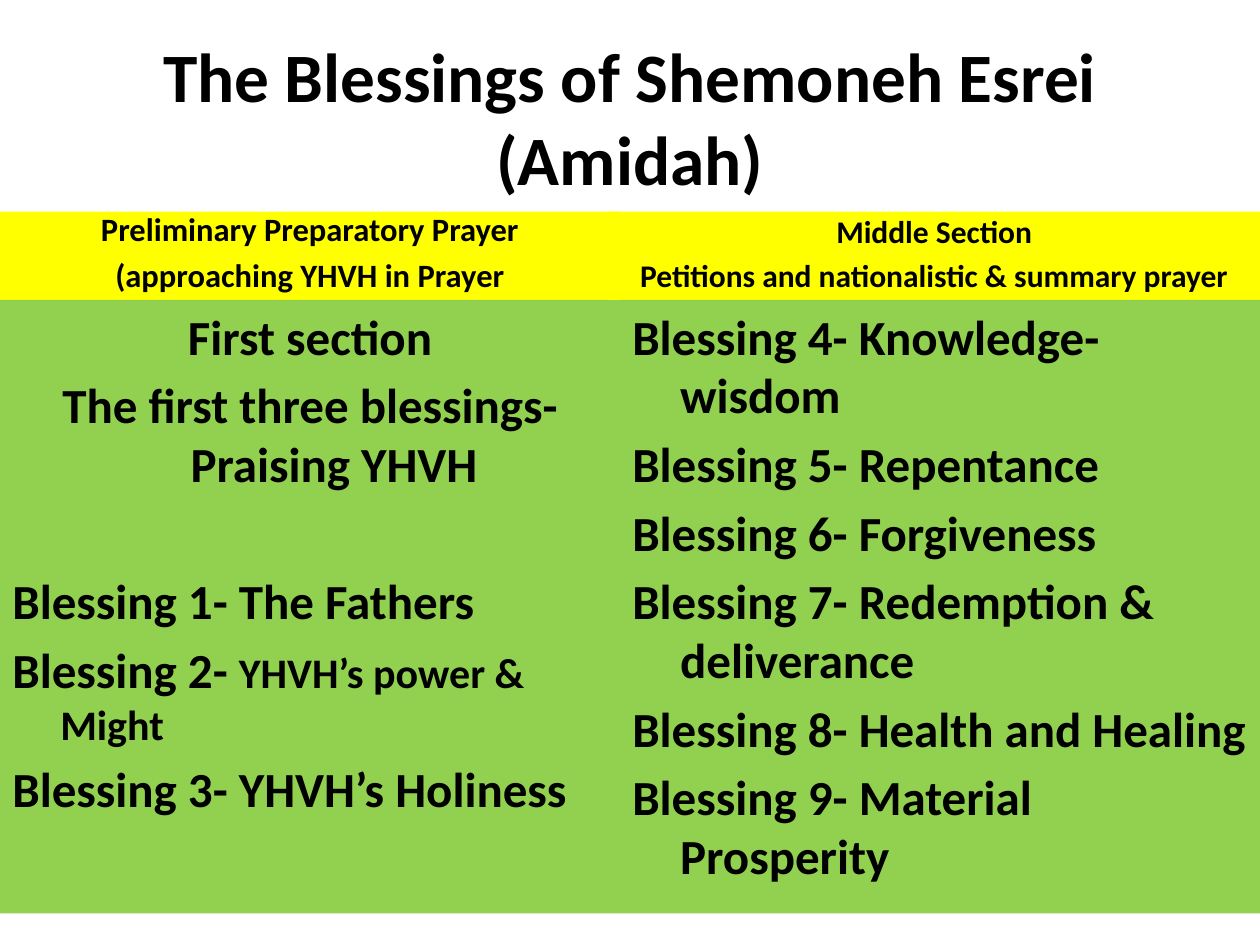
from pptx import Presentation
from pptx.util import Inches, Pt
from pptx.dml.color import RGBColor
from pptx.enum.shapes import MSO_SHAPE as Shape
from pptx.enum.text import MSO_ANCHOR as Anchor, PP_ALIGN as Align

BLACK = RGBColor(0x00, 0x00, 0x00)
YELLOW = RGBColor(0xFF, 0xFF, 0x00)
GREEN = RGBColor(0x92, 0xD0, 0x50)
FONT = "Calibri"
MID, LEFT = Align.CENTER, Align.LEFT
HANG = 0.38
GAP = 39.2  # height of one skipped line, in points

# Content: each line is (alignment, extra space before, [(text, size), ...])
TITLE = [(MID, 0, [("The Blessings of Shemoneh Esrei (Amidah)", 39.6)])]
FIRST_HEAD = [
    (MID, 0, [("Preliminary Preparatory Prayer", 18.6)]),
    (MID, 0, [("(approaching YHVH in Prayer", 18.6)]),
]
FIRST_BODY = [
    (MID, 0, [("First section", 28)]),
    (MID, 0, [("The first three blessings- Praising YHVH", 28)]),
    (LEFT, GAP, [("Blessing 1- The Fathers", 28)]),
    (LEFT, 0, [("Blessing 2- ", 28), ("YHVH’s power & Might", 24)]),
    (LEFT, 0, [("Blessing 3- YHVH’s Holiness", 28)]),
]
NEXT_HEAD = [
    (MID, 0, [("Middle Section", 18)]),
    (MID, 0, [("Petitions and nationalistic & summary prayer", 18)]),
]
TOPICS = ["Knowledge- wisdom", "Repentance", "Forgiveness",
          "Redemption & deliverance", "Health and Healing",
          "Material Prosperity"]
NEXT_BODY = [(LEFT, 0, [(f"Blessing {num}- {topic}", 28)])
             for num, topic in enumerate(TOPICS, 4)]

# Panels: left, top, width, height, fill, anchor, hanging indent, lines
HEAD_ROW, BODY_ROW = (1.68, 0.7), (2.38, 4.87)
PANELS = [
    (0, *HEAD_ROW, 4.92, YELLOW, Anchor.BOTTOM, 0, FIRST_HEAD),
    (0, *BODY_ROW, 4.92, GREEN, Anchor.TOP, HANG, FIRST_BODY),
    (4.83, *HEAD_ROW, 5.17, YELLOW, Anchor.BOTTOM, 0, NEXT_HEAD),
    (4.92, *BODY_ROW, 5.08, GREEN, Anchor.TOP, HANG, NEXT_BODY),
]


def write(frame, lines, anchor, hang=0, lead=0.2):
    frame.word_wrap = True
    frame.vertical_anchor = anchor
    for i, (align, extra, parts) in enumerate(lines):
        para = frame.add_paragraph() if i else frame.paragraphs[0]
        para.alignment = align
        para.space_before = Pt(round(parts[0][1] * lead + extra, 1))
        if hang:
            props = para._p.get_or_add_pPr()
            props.set("marL", str(Inches(hang)))
            props.set("indent", str(-Inches(hang)))
        for text, size in parts:
            run = para.add_run()
            run.text = text
            font = run.font
            font.name, font.size, font.bold = FONT, Pt(size), True
            font.color.rgb = BLACK


deck = Presentation()
deck.slide_width, deck.slide_height = Inches(10), Inches(7.5)
slide = deck.slides.add_slide(deck.slide_layouts[6])

# Title
title = slide.shapes.add_textbox(Inches(0.5), Inches(0.3), Inches(9), Inches(1.25))
write(title.text_frame, TITLE, Anchor.MIDDLE, lead=0)

# Headings and blessing lists
for left, top, height, width, fill, anchor, hang, lines in PANELS:
    panel = slide.shapes.add_shape(Shape.RECTANGLE, Inches(left), Inches(top),
                                   Inches(width), Inches(height))
    panel.shadow.inherit = False
    panel.fill.solid()
    panel.fill.fore_color.rgb = fill
    panel.line.fill.background()
    write(panel.text_frame, lines, anchor, hang)

deck.save("out.pptx")
